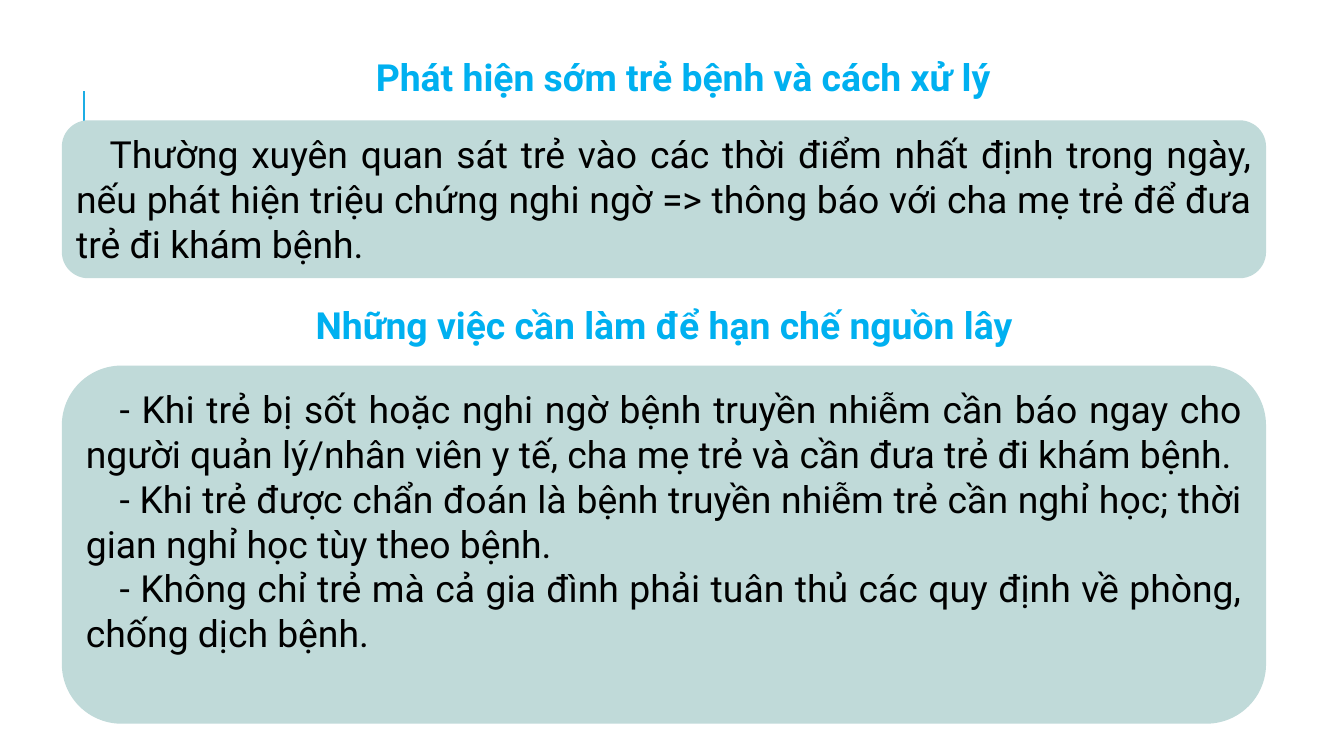
from pptx import Presentation
from pptx.dml.color import RGBColor
from pptx.enum.shapes import MSO_CONNECTOR, MSO_SHAPE
from pptx.enum.text import MSO_ANCHOR, MSO_AUTO_SIZE, PP_ALIGN
from pptx.util import Pt
from lxml import etree

ROUND = MSO_SHAPE.ROUNDED_RECTANGLE
STRAIGHT = MSO_CONNECTOR.STRAIGHT
TOP, MIDDLE = MSO_ANCHOR.TOP, MSO_ANCHOR.MIDDLE
CENTER, JUSTIFY = PP_ALIGN.CENTER, PP_ALIGN.JUSTIFY
A = "http://schemas.openxmlformats.org/drawingml/2006/main"

FONT, SIZE = "Roboto", 40
BLACK, BLUE, TEAL, ACCENT = "000000", "00B0F0", "C0DAD9", "1CADE4"
LEFT, WIDTH = 66.24, 1290.24
INDENT = 36

EARLY = "Phát hiện sớm trẻ bệnh và cách xử lý"
LIMIT = "Những việc cần làm để hạn chế nguồn lây"
WATCH = [
    "Thường xuyên quan sát trẻ vào các thời điểm nhất định trong ngày, "
    "nếu phát hiện triệu chứng nghi ngờ => thông báo với cha mẹ trẻ để "
    "đưa trẻ đi khám bệnh.",
]
STEPS = [
    "- Khi trẻ bị sốt hoặc nghi ngờ bệnh truyền nhiễm cần báo ngay cho "
    "người quản lý/nhân viên y tế, cha mẹ trẻ và cần đưa trẻ đi khám bệnh.",
    "- Khi trẻ được chẩn đoán là bệnh truyền nhiễm trẻ cần nghỉ học; thời "
    "gian nghỉ học tùy theo bệnh.",
    "- Không chỉ trẻ mà cả gia đình phải tuân thủ các quy định về phòng, "
    "chống dịch bệnh.",
]
CARDS = [(STEPS, 391.68, 383.76), (WATCH, 128.88, 169.2)]  # text, top, height


def rgb(code):
    return RGBColor.from_string(code)


def write(frame, lines, color, align, bold=False):
    frame.word_wrap = True
    frame.text = "\n".join(lines)
    for para in frame.paragraphs:
        para.alignment = align
        for run in para.runs:
            font = run.font
            font.name, font.size, font.bold = FONT, Pt(SIZE), bold
            font.color.rgb = rgb(color)


def head(shape, text):
    frame = shape.text_frame
    write(frame, [text], BLUE, CENTER, True)
    frame.auto_size = MSO_AUTO_SIZE.NONE
    frame.vertical_anchor = MIDDLE
    frame.margin_left = frame.margin_right = Pt(14.4)
    frame.margin_top = frame.margin_bottom = Pt(7.2)


def card(slide, lines, top, height):
    shape = slide.shapes.add_shape(ROUND, Pt(LEFT), Pt(top), Pt(WIDTH), Pt(height))
    shape.shadow.inherit = False
    shape.fill.solid()
    shape.fill.fore_color.rgb = rgb(TEAL)
    shape.line.fill.background()
    frame = shape.text_frame
    write(frame, lines, BLACK, JUSTIFY)
    frame.vertical_anchor = TOP
    for para in frame.paragraphs:
        props = para._p.get_or_add_pPr()
        props.set("marL", "0")
        props.set("indent", str(Pt(INDENT)))


def main():
    deck = Presentation()
    deck.slide_width, deck.slide_height = Pt(1440), Pt(810)
    slide = deck.slides.add_slide(deck.slide_layouts[5])

    rule = slide.shapes.add_connector(STRAIGHT, Pt(90), Pt(206), Pt(90), Pt(98))
    rule.line.color.rgb = rgb(ACCENT)
    rule.line.width = Pt(1.5)
    etree.SubElement(rule._element.spPr, f"{{{A}}}effectLst")

    title = slide.shapes.title
    title.left, title.top = Pt(108), Pt(35.28)
    title.width, title.height = Pt(1247.76), Pt(92.88)
    head(title, EARLY)

    for lines, top, height in CARDS:
        card(slide, lines, top, height)
    box = slide.shapes.add_textbox(Pt(LEFT), Pt(300.96), Pt(WIDTH), Pt(92.88))
    head(box, LIMIT)

    deck.save("out.pptx")


if __name__ == "__main__":
    main()
